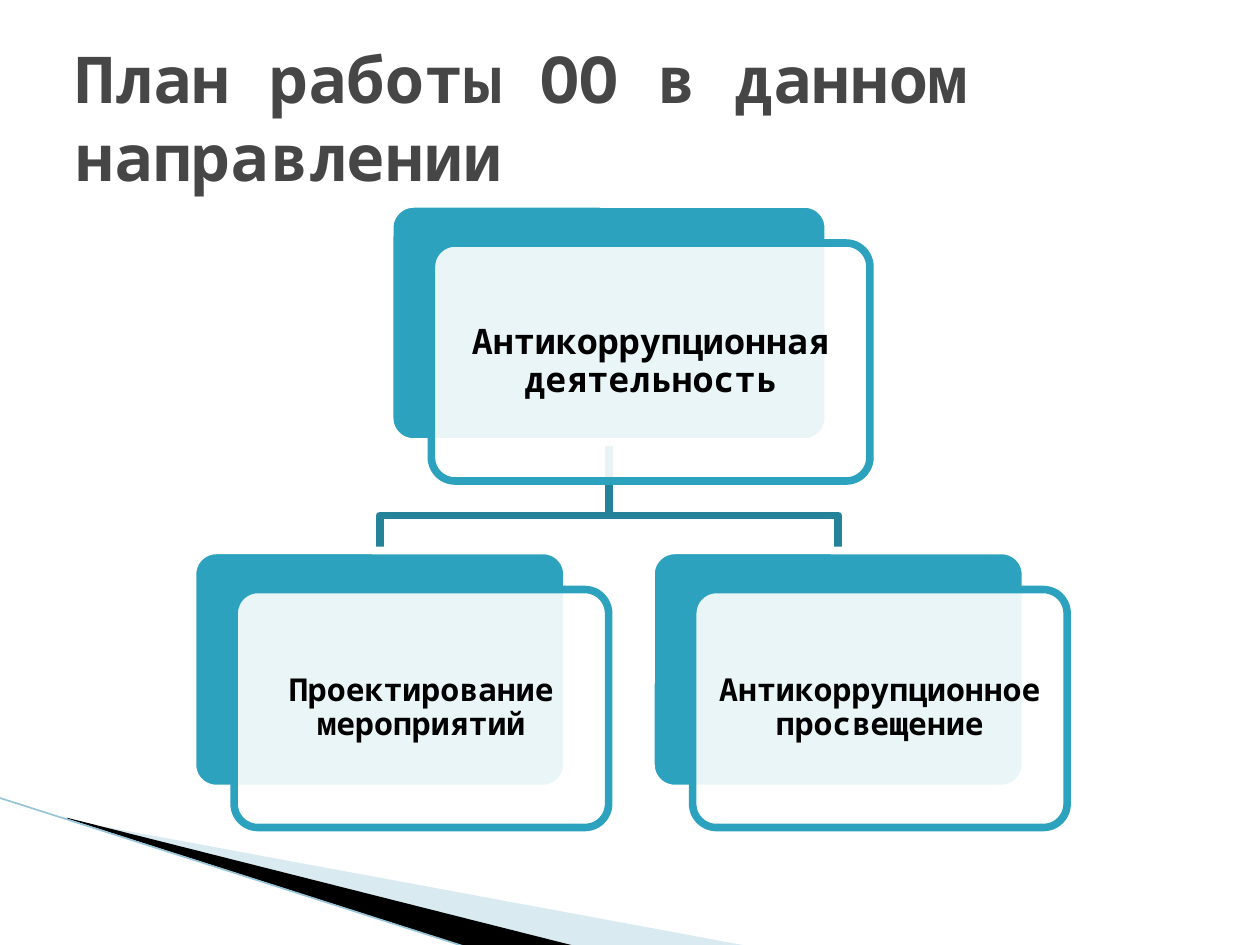
"""Build the anti-corruption work plan slide with its two-level hierarchy."""
from dataclasses import dataclass

from lxml.etree import SubElement
from pptx import Presentation
from pptx.dml.color import RGBColor as Rgb
from pptx.enum.shapes import MSO_CONNECTOR as Connector, MSO_SHAPE as Preset
from pptx.enum.text import MSO_ANCHOR as Anchor, MSO_AUTO_SIZE as AutoSize, PP_ALIGN as Align
from pptx.oxml.ns import qn
from pptx.util import Pt


@dataclass(frozen=True)
class Theme:
    font: str = "Noto Sans Mono"
    title_size: float = 36.9
    root_size: float = 20
    branch_size: float = 18
    outline: float = 4.33
    hairline: float = 0.95
    title: str = "464646"
    text: str = "000000"
    accent: str = "2DA2BF"
    link: str = "248299"
    paper: str = "FFFFFF"
    sweep_light: str = "A0CBDC"
    sweep_dark: str = "000000"
    sweep_edge: str = "97C5D8"


@dataclass(frozen=True)
class Node:
    label: str
    left: float
    top: float
    width: float
    size: float
    height: float = 136

    @property
    def center(self) -> float:
        return self.left + self.width / 2


THEME = Theme()
OFFSET_X, OFFSET_Y = 23.8, 22.3
ROOT = Node("Антикоррупционная деятельность", 222.7, 116.6, 250.6, THEME.root_size)
BRANCHES = [
    Node(label, 110 + 262 * index, 314.6, 214, THEME.branch_size)
    for index, label in enumerate(
        ["Проектирование мероприятий", "Антикоррупционное просвещение"]
    )
]
BUS_Y = 294.5
SWEEPS = [
    ([(39.6, 468.7), (428.4, 540.7), (328.3, 540.7), (39.6, 468)], THEME.sweep_light, 40),
    ([(38.2, 467.3), (329, 540.7), (267.8, 541.4), (38.9, 468)], THEME.sweep_dark, 100),
]


def fill_solid(shape, color: str, opacity: int = 100) -> None:
    """Fill a shape with a colour at a percentage of opacity."""
    shape.fill.solid()
    shape.fill.fore_color.rgb = Rgb.from_string(color)
    if opacity < 100:
        swatch = shape.fill._xPr.find(qn("a:solidFill"))[0]
        SubElement(swatch, qn("a:alpha"), val=str(opacity * 1000))


def set_line(shape, color: str, width: float) -> None:
    """Set the colour and width of an outline."""
    shape.line.color.rgb = Rgb.from_string(color)
    shape.line.width = Pt(width)


def add_run(paragraph, words: str, size: float, color: str) -> None:
    """Append a bold run in the theme font."""
    run = paragraph.add_run()
    run.text = words
    run.font.name = THEME.font
    run.font.size = Pt(size)
    run.font.bold = True
    run.font.color.rgb = Rgb.from_string(color)


def add_path(slide, points: list[tuple[float, float]], closed: bool):
    """Draw a straight-sided outline through the points."""
    corners = [(Pt(x), Pt(y)) for x, y in points]
    builder = slide.shapes.build_freeform(*corners[0])
    builder.add_line_segments(corners[1:], close=closed)
    path = builder.convert_to_shape()
    path.shadow.inherit = False
    return path


def add_sweeps(slide) -> None:
    """Draw the decorative wedges and their edge in the lower left corner."""
    for points, color, opacity in SWEEPS:
        wedge = add_path(slide, points, closed=True)
        fill_solid(wedge, color, opacity)
        wedge.line.fill.background()
    edge = slide.shapes.add_connector(
        Connector.STRAIGHT, Pt(-0.7), Pt(455.8), Pt(267.1), Pt(541.4)
    )
    set_line(edge, THEME.sweep_edge, THEME.hairline)
    SubElement(edge._element.spPr, qn("a:effectLst"))


def add_link(slide, parent: Node, child: Node) -> None:
    """Draw the elbow from a parent card down to a child card."""
    start = parent.top + parent.height
    points = [(parent.center, start), (parent.center, BUS_Y),
              (child.center, BUS_Y), (child.center, child.top)]
    link = add_path(slide, points, closed=False)
    link.fill.background()
    set_line(link, THEME.link, THEME.outline)


def add_card(slide, node: Node, shift_x: float = 0, shift_y: float = 0):
    """Draw one rounded card of a node at a shift from its corner."""
    card = slide.shapes.add_shape(
        Preset.ROUNDED_RECTANGLE, Pt(node.left + shift_x), Pt(node.top + shift_y),
        Pt(node.width), Pt(node.height),
    )
    card.adjustments[0] = 0.1
    card.shadow.inherit = False
    return card


def add_node(slide, node: Node) -> None:
    """Draw the solid back card and the labelled translucent front card."""
    back = add_card(slide, node)
    fill_solid(back, THEME.accent)
    set_line(back, THEME.paper, THEME.outline)
    front = add_card(slide, node, OFFSET_X, OFFSET_Y)
    fill_solid(front, THEME.paper, 90)
    set_line(front, THEME.accent, THEME.outline)
    frame = front.text_frame
    frame.word_wrap = True
    frame.vertical_anchor = Anchor.MIDDLE
    frame.margin_left = frame.margin_right = Pt(2)
    frame.margin_top = frame.margin_bottom = Pt(2)
    paragraph = frame.paragraphs[0]
    paragraph.alignment = Align.CENTER
    paragraph.line_spacing = 0.9
    add_run(paragraph, node.label, node.size, THEME.text)


def add_title(slide, words: str) -> None:
    """Place and format the title placeholder."""
    title = slide.shapes.title
    title.left, title.top, title.width, title.height = Pt(36), Pt(21.6), Pt(648), Pt(90)
    frame = title.text_frame
    frame.auto_size = AutoSize.NONE
    frame.word_wrap = True
    frame.vertical_anchor = Anchor.MIDDLE
    paragraph = frame.paragraphs[0]
    paragraph.alignment = Align.LEFT
    add_run(paragraph, words, THEME.title_size, THEME.title)


def main() -> None:
    """Assemble and save the slide."""
    deck = Presentation()
    deck.slide_width, deck.slide_height = Pt(720), Pt(540)
    slide = deck.slides.add_slide(deck.slide_layouts[5])
    add_title(slide, "План работы ОО в данном направлении")
    add_sweeps(slide)
    for branch in reversed(BRANCHES):
        add_link(slide, ROOT, branch)
    for node in [ROOT, *BRANCHES]:
        add_node(slide, node)
    deck.save("out.pptx")


if __name__ == "__main__":
    main()
